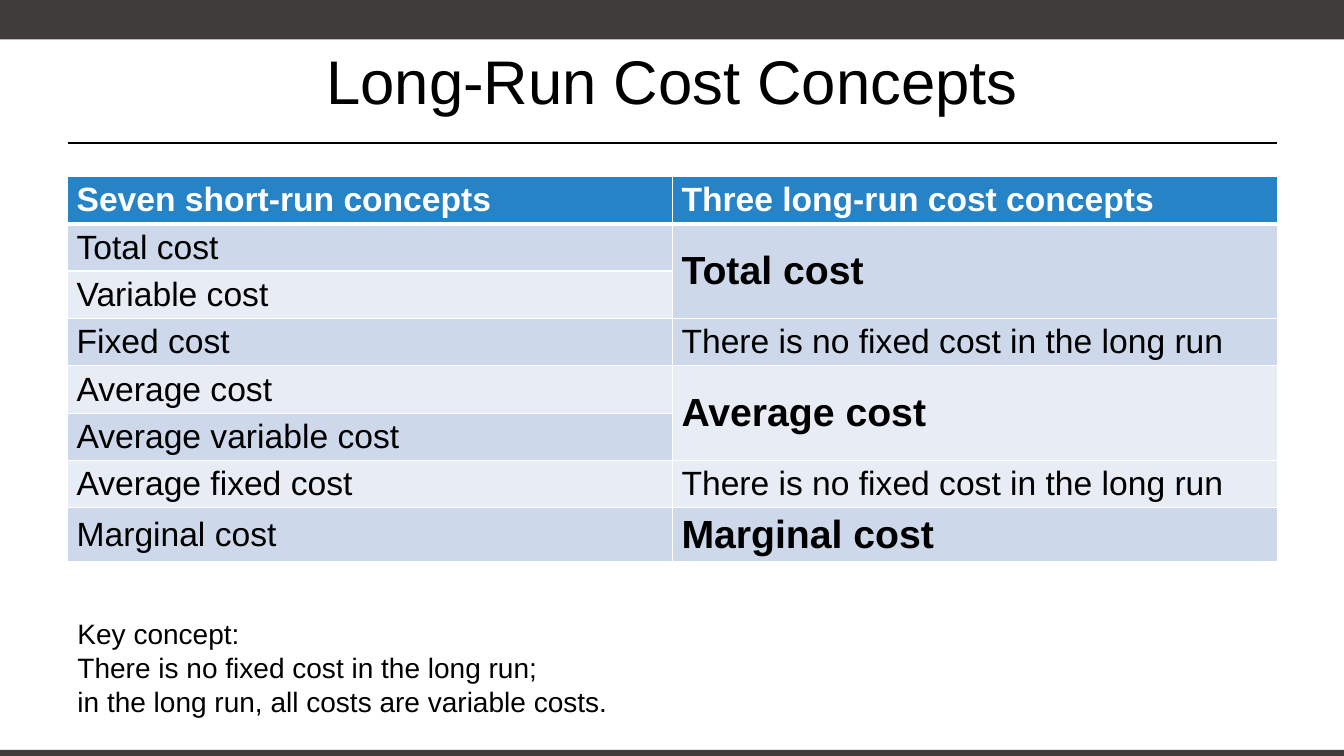
"""Build the slide that compares short-run and long-run cost concepts."""
from lxml.etree import SubElement
from pptx import Presentation
from pptx.dml.color import RGBColor
from pptx.enum.shapes import MSO_CONNECTOR, MSO_SHAPE
from pptx.enum.text import MSO_ANCHOR, PP_ALIGN
from pptx.oxml import parse_xml
from pptx.oxml.ns import nsdecls, qn
from pptx.util import Inches, Pt

BLACK = RGBColor(0x00, 0x00, 0x00)
WHITE = RGBColor(0xFF, 0xFF, 0xFF)
CHARCOAL = RGBColor(0x3E, 0x3D, 0x3C)
HEADER_BLUE = RGBColor(0x26, 0x83, 0xC6)
BAND_DARK = RGBColor(0xCD, 0xD9, 0xEA)
BAND_LIGHT = RGBColor(0xE8, 0xED, 0xF5)

NO_FIXED_COST = "There is no fixed cost in the long run"
ROWS = [
    ("Seven short-run concepts", "Three long-run cost concepts"),
    ("Total cost", "Total cost"),
    ("Variable cost", None),
    ("Fixed cost", NO_FIXED_COST),
    ("Average cost", "Average cost"),
    ("Average variable cost", None),
    ("Average fixed cost", NO_FIXED_COST),
    ("Marginal cost", "Marginal cost"),
]
KEY_CONCEPT = [
    "Key concept:",
    "There is no fixed cost in the long run;",
    "in the long run, all costs are variable costs.",
]


def write_text(frame, lines, size, color=BLACK, bold=False,
               align=PP_ALIGN.LEFT, anchor=MSO_ANCHOR.MIDDLE):
    """Write one paragraph per line in a single format."""
    frame.word_wrap = True
    frame.vertical_anchor = anchor
    for index, line in enumerate(lines):
        paragraph = frame.add_paragraph() if index else frame.paragraphs[0]
        paragraph.alignment = align
        run = paragraph.add_run()
        run.text = line
        run.font.name = "Arial"
        run.font.size = Pt(size)
        run.font.bold = bold
        run.font.color.rgb = color


def set_borders(cell, bottom_width):
    """Give a cell white borders, with its own bottom width."""
    properties = cell._tc.get_or_add_tcPr()
    widths = [("L", 1), ("R", 1), ("T", 1), ("B", bottom_width)]
    for index, (side, width) in enumerate(widths):
        border = parse_xml(f'<a:ln{side} {nsdecls("a")} w="{Pt(width)}"/>')
        fill = SubElement(border, qn("a:solidFill"))
        SubElement(fill, qn("a:srgbClr"), val=str(WHITE))
        properties.insert(index, border)


presentation = Presentation()
presentation.slide_width = Inches(13.33)
presentation.slide_height = Inches(7.5)
slide = presentation.slides.add_slide(presentation.slide_layouts[5])

for top, height in [(0, 0.39), (7.44, 0.1)]:
    bar = slide.shapes.add_shape(MSO_SHAPE.RECTANGLE, 0, Inches(top),
                                 presentation.slide_width, Inches(height))
    bar.shadow.inherit = False
    bar.fill.solid()
    bar.fill.fore_color.rgb = CHARCOAL
    bar.line.fill.background()

rule = slide.shapes.add_connector(MSO_CONNECTOR.STRAIGHT, Inches(0.67),
                                  Inches(1.42), Inches(12.67), Inches(1.42))
rule.line.color.rgb = BLACK
rule.line.width = Pt(1.25)
SubElement(rule._element.spPr, qn("a:effectLst"))

title = slide.shapes.title
title.left, title.top = Inches(0.67), Inches(0.17)
title.width, title.height = Inches(12), Inches(1.25)
write_text(title.text_frame, ["Long-Run Cost Concepts"], 44,
           align=PP_ALIGN.CENTER)

table = slide.shapes.add_table(len(ROWS), 2, Inches(0.67), Inches(1.75),
                               Inches(12), Inches(3.82)).table
for row in table.rows:
    row.height = Inches(0.47)
table.rows[len(ROWS) - 1].height = Inches(0.53)

for row_index, texts in enumerate(ROWS):
    header = row_index == 0
    band = BAND_DARK if row_index % 2 else BAND_LIGHT
    for column_index, text in enumerate(texts):
        cell = table.cell(row_index, column_index)
        cell.margin_left = cell.margin_right = Inches(0.09)
        cell.margin_top = cell.margin_bottom = Inches(0.04)
        cell.fill.solid()
        cell.fill.fore_color.rgb = HEADER_BLUE if header else band
        set_borders(cell, 3 if header else 1)
        if text is None:
            table.cell(row_index - 1, column_index).merge(cell)
            continue
        long_run = not header and column_index == 1 and text != NO_FIXED_COST
        write_text(cell.text_frame, [text], 28 if long_run else 24,
                   color=WHITE if header else BLACK, bold=header or long_run)
        cell.vertical_anchor = MSO_ANCHOR.MIDDLE

key_box = slide.shapes.add_textbox(Inches(0.67), Inches(6.07),
                                   Inches(12), Inches(1.11))
write_text(key_box.text_frame, KEY_CONCEPT, 20, anchor=MSO_ANCHOR.TOP)

presentation.save("out.pptx")
